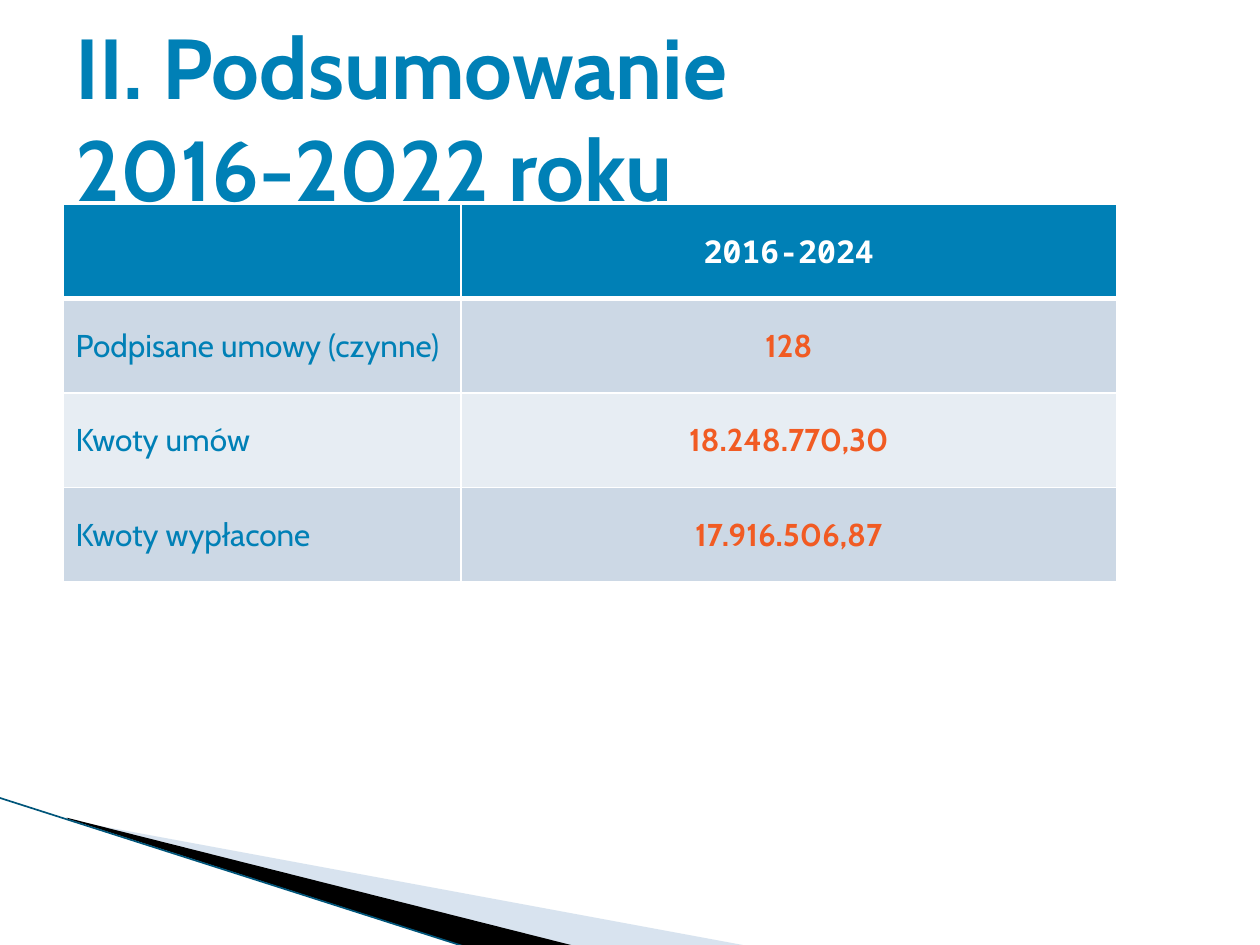
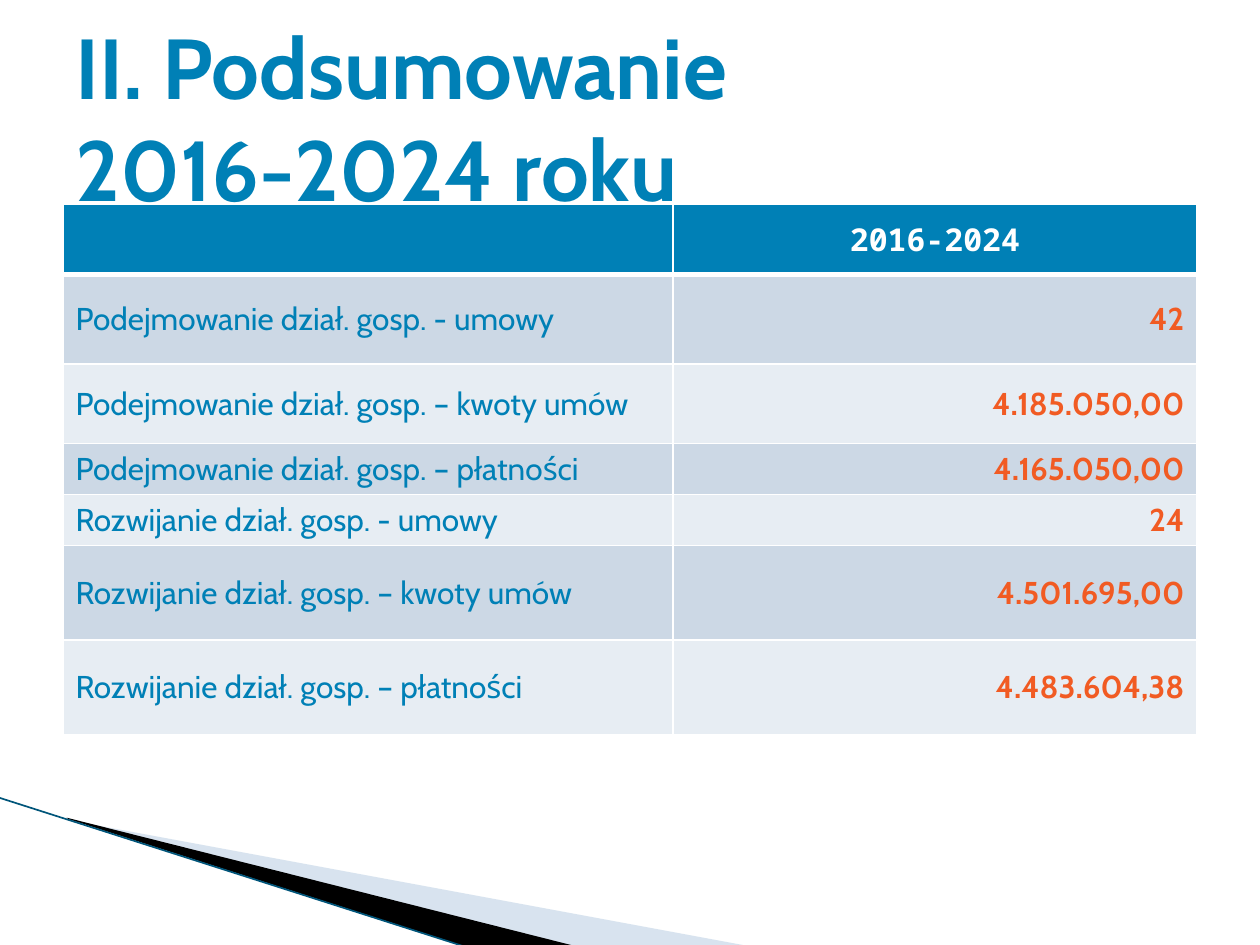
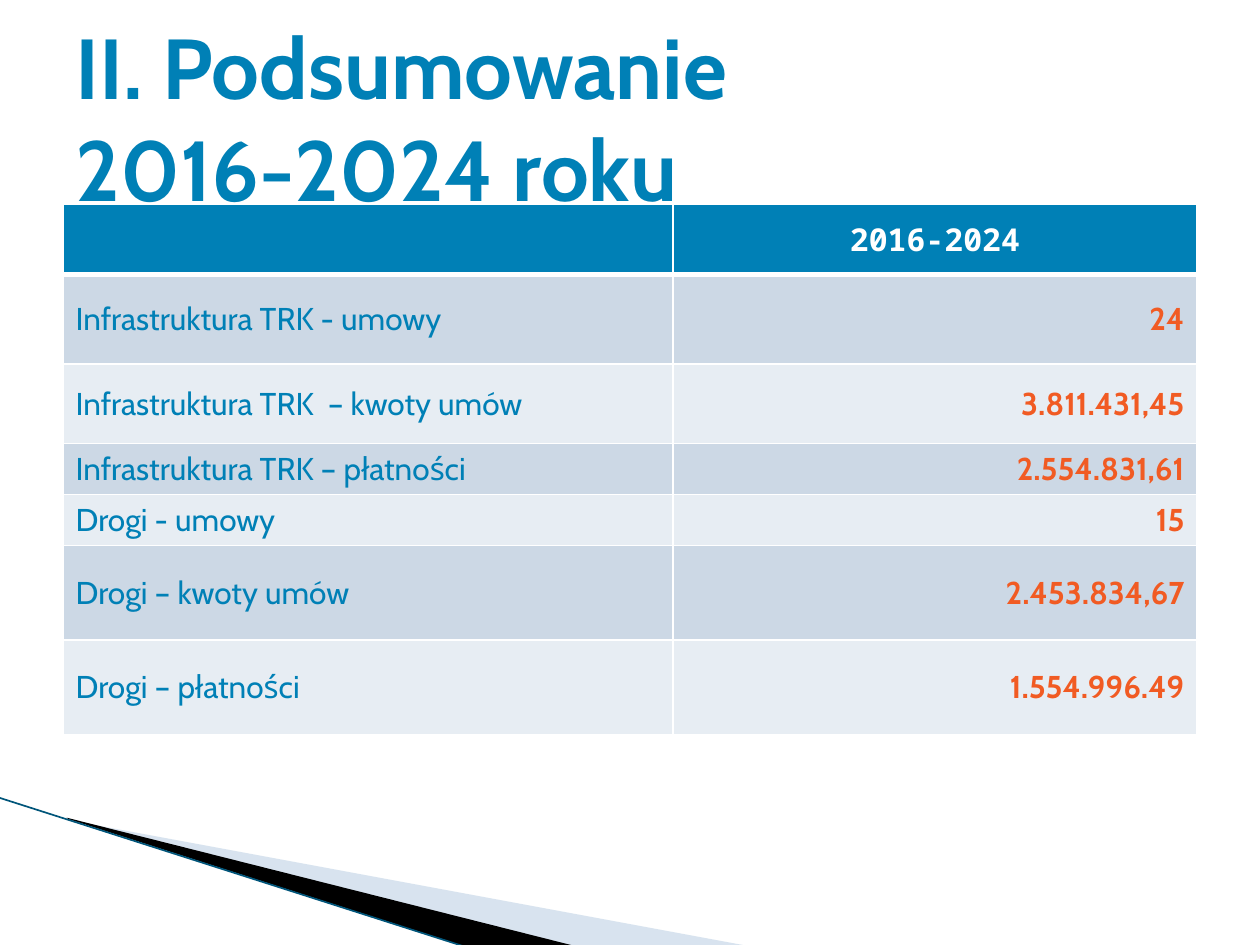
import pptx
import pptx.dml.color
import pptx.enum.shapes
import pptx.enum.text
import pptx.oxml
import pptx.oxml.ns
import pptx.util
from pptx.util import Inches

COLORS = {
    "blue": "0080B6",
    "orange": "F15B23",
    "white": "FFFFFF",
    "band_dark": "CCD8E5",
    "band_light": "E7EDF3",
    "wedge_pale": "9EBAD7",
    "wedge_black": "000000",
    "edge": "00557A",
}
RGB = {name: pptx.dml.color.RGBColor.from_string(h) for name, h in COLORS.items()}
ALIGN = pptx.enum.text.PP_ALIGN
MIDDLE = pptx.enum.text.MSO_ANCHOR.MIDDLE
NS = pptx.oxml.ns.nsdecls("a")

WEDGES = [
    ("wedge_pale", [(0.55, 6.51), (5.95, 7.51), (4.56, 7.51), (0.55, 6.5)]),
    ("wedge_black", [(0.53, 6.49), (4.57, 7.51), (3.72, 7.52), (0.54, 6.5)]),
]
SHORT = {"cols": [3.16, 5.2], "heights": [0.75] * 4, "align": ALIGN.CENTER}
LONG = {"cols": [4.84, 4.16], "heights": [0.56, 0.71, 0.63, 0.4, 0.4, 0.75, 0.75],
        "align": ALIGN.RIGHT}
SLIDES = [
    ("2016-2022", SHORT, [
        ("Podpisane umowy (czynne)", "128"),
        ("Kwoty umów", "18.248.770,30"),
        ("Kwoty wypłacone", "17.916.506,87"),
    ]),
    ("2016-2024", LONG, [
        ("Podejmowanie dział. gosp. - umowy", "42"),
        ("Podejmowanie dział. gosp. – kwoty umów", "4.185.050,00"),
        ("Podejmowanie dział. gosp. – płatności", "4.165.050,00"),
        ("Rozwijanie dział. gosp. - umowy", "24"),
        ("Rozwijanie dział. gosp. – kwoty umów", "4.501.695,00"),
        ("Rozwijanie dział. gosp. – płatności", "4.483.604,38"),
    ]),
    ("2016-2024", LONG, [
        ("Infrastruktura TRK - umowy", "24"),
        ("Infrastruktura TRK  – kwoty umów", "3.811.431,45"),
        ("Infrastruktura TRK – płatności", "2.554.831,61"),
        ("Drogi - umowy", "15"),
        ("Drogi – kwoty umów", "2.453.834,67"),
        ("Drogi – płatności", "1.554.996.49"),
    ]),
]


def write(tf, text, color="blue", size=18, font="Cabin", bold=False, align=ALIGN.LEFT):
    """Fill the first paragraph; a vertical tab in the text is a line break."""
    p = tf.paragraphs[0]
    p.text = text
    p.alignment = align
    for r in p.runs:
        r.font.name = font
        r.font.size = pptx.util.Pt(size)
        r.font.bold = bold
        r.font.color.rgb = RGB[color]


def style_cell(cell, fill, top=1, bottom=1):
    """Give a cell its fill and white borders, with widths in points."""
    tcPr = cell._tc.get_or_add_tcPr()
    for side, width in (("L", 1), ("R", 1), ("T", top), ("B", bottom)):
        tcPr.append(pptx.oxml.parse_xml(
            f'<a:ln{side} {NS} w="{pptx.util.Pt(width)}"><a:solidFill>'
            f'<a:srgbClr val="{COLORS["white"]}"/></a:solidFill></a:ln{side}>'))
    cell.fill.solid()
    cell.fill.fore_color.rgb = RGB[fill]
    cell.vertical_anchor = MIDDLE


prs = pptx.Presentation()
prs.slide_width = Inches(10)
prs.slide_height = Inches(7.5)

for years, layout, rows in SLIDES:
    s = prs.slides.add_slide(prs.slide_layouts[6])

    # Corner decoration
    for color, points in WEDGES:
        start, *rest = [(Inches(x), Inches(y)) for x, y in points]
        builder = s.shapes.build_freeform(*start)
        builder.add_line_segments(rest, close=True)
        sp = builder.convert_to_shape()
        sp.shadow.inherit = False
        sp.line.fill.background()
        sp.fill.solid()
        sp.fill.fore_color.rgb = RGB[color]
        if color == "wedge_pale":
            clr = sp._element.spPr.find(".//" + pptx.oxml.ns.qn("a:srgbClr"))
            clr.append(pptx.oxml.parse_xml(f'<a:alpha {NS} val="40000"/>'))
    edge = s.shapes.add_connector(pptx.enum.shapes.MSO_CONNECTOR.STRAIGHT,
                                  Inches(-0.01), Inches(6.33), Inches(3.71), Inches(7.52))
    edge.line.color.rgb = RGB["edge"]
    edge.line.width = pptx.util.Pt(0.95)
    edge._element.spPr.append(pptx.oxml.parse_xml(f"<a:effectLst {NS}/>"))

    # Table
    cols, heights = layout["cols"], layout["heights"]
    table = s.shapes.add_table(len(heights), len(cols), Inches(0.5), Inches(1.62),
                               Inches(sum(cols)), Inches(sum(heights))).table
    for i, width in enumerate(cols):
        table.columns[i].width = Inches(width)
    for i, height in enumerate(heights):
        table.rows[i].height = Inches(height)
    for cell in table.rows[0].cells:
        style_cell(cell, "blue", bottom=3)
    write(table.cell(0, 1).text_frame, "2016-2024", color="white",
          font="Noto Sans Mono", bold=True, align=ALIGN.CENTER)
    for i, (label, value) in enumerate(rows, start=1):
        for cell in table.rows[i].cells:
            style_cell(cell, "band_dark" if i % 2 else "band_light", top=3 if i == 1 else 1)
        write(table.cell(i, 0).text_frame, label)
        write(table.cell(i, 1).text_frame, value, color="orange", bold=True,
              align=layout["align"])

    # Title
    tf = s.shapes.add_textbox(Inches(0.5), Inches(0.3), Inches(9), Inches(1.25)).text_frame
    tf.word_wrap = True
    tf.vertical_anchor = MIDDLE
    write(tf, f"II. Podsumowanie\v{years} roku", size=48.6, bold=True)

prs.save("out.pptx")
